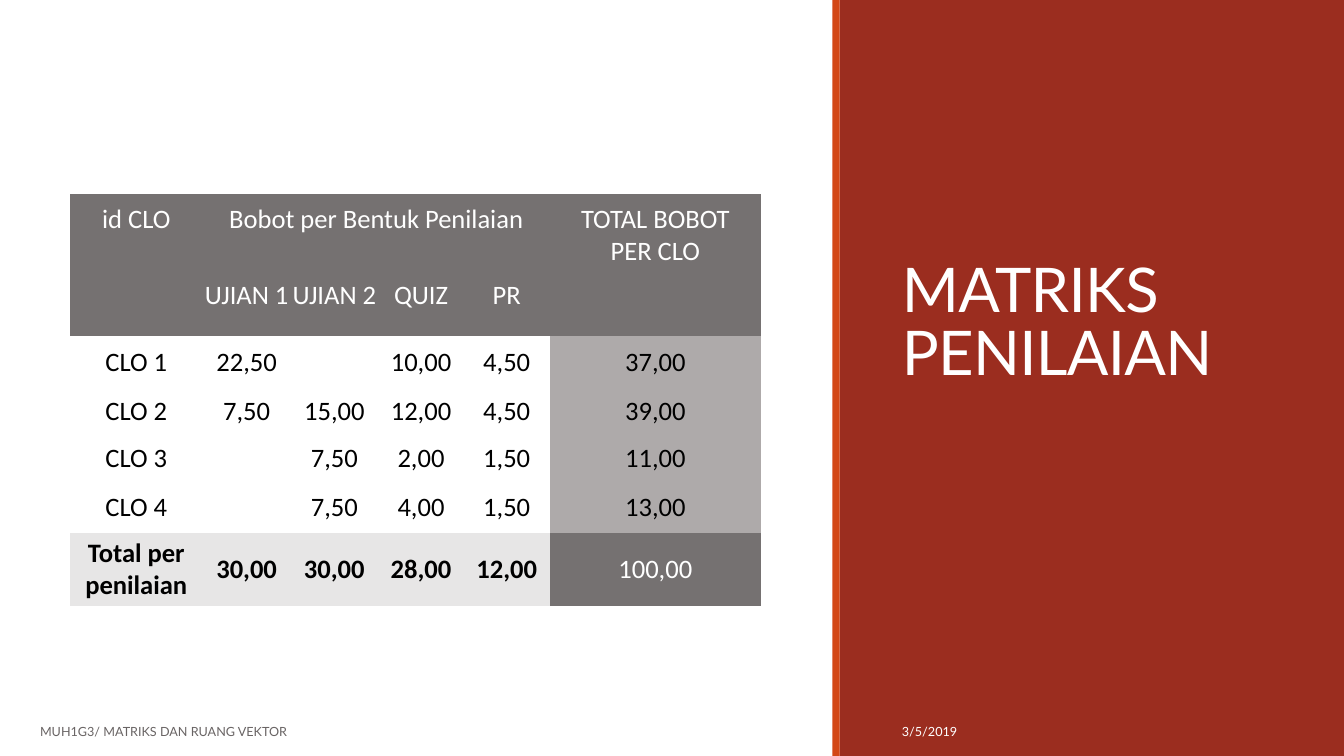
from pptx import Presentation
from pptx.dml.color import RGBColor
from pptx.enum.shapes import MSO_SHAPE
from pptx.enum.text import MSO_ANCHOR, PP_ALIGN
from pptx.util import Cm, Pt

THEME = {
    "red": "9B2D1F", "orange": "D34817", "white": "FFFFFF", "black": "000000",
    "muted": "696464", "dark": "757171", "mid": "AEAAAA", "light": "E7E6E6",
    "text_font": "Lato", "table_font": "Calibri",
    "title_size": 44, "table_size": 19, "footer_size": 9,
}

SLIDE_W, SLIDE_H = 33.87, 19.05
PANEL_X, STRIPE_W = 21.16, 0.18
BARS = [  # left, width, colour
    (PANEL_X, SLIDE_W - PANEL_X, "red"),
    (PANEL_X - STRIPE_W, STRIPE_W, "orange"),
]
TEXTS = [  # text, box, size, colour, anchor, format of the paragraph, letter spacing
    ("MATRIKS PENILAIAN", (22.48, 1.78, 10.16, 8.13), "title_size", "white",
     MSO_ANCHOR.BOTTOM, {"line_spacing": 0.85}, -50),
    ("MUH1G3/ MATRIKS DAN RUANG VEKTOR", (0.76, 17.93, 19.58, 1.02), "footer_size", "muted",
     MSO_ANCHOR.MIDDLE, {"space_after": Pt(6)}, 0),
    ("3/5/2019", (22.48, 17.93, 7.75, 1.02), "footer_size", "white",
     MSO_ANCHOR.MIDDLE, {"space_after": Pt(6)}, 0),
]

TABLE_AT = (1.76, 4.89)
COLS = [3.35, 2.21, 2.21, 2.16, 2.16, 5.33]
ROWS = [1.52, 2.01, 1.3, 1.17, 1.17, 1.3, 1.85]
MERGES = [((0, 0), (1, 0)), ((0, 1), (0, 4)), ((0, 5), (1, 5))]
CELLS = [
    ["id CLO", "Bobot per Bentuk Penilaian", "", "", "", "TOTAL BOBOT PER CLO"],
    ["", "UJIAN 1", "UJIAN 2", "QUIZ", "PR", ""],
    ["CLO 1", "22,50", "", "10,00", "4,50", "37,00"],
    ["CLO 2", "7,50", "15,00", "12,00", "4,50", "39,00"],
    ["CLO 3", "", "7,50", "2,00", "1,50", "11,00"],
    ["CLO 4", "", "7,50", "4,00", "1,50", "13,00"],
    ["Total per penilaian", "30,00", "30,00", "28,00", "12,00", "100,00"],
]
HEAD_FORMAT = {"vertical_anchor": MSO_ANCHOR.TOP, "margin_left": Cm(0.46), "margin_right": Cm(0.46),
               "margin_top": Cm(0.23), "margin_bottom": Cm(0.23)}
CELL_FORMAT = {"vertical_anchor": MSO_ANCHOR.MIDDLE, "margin_left": Cm(0.02), "margin_right": Cm(0.02),
               "margin_top": Cm(0.02), "margin_bottom": Cm(0)}
NO_STYLE = "{2D5ABB26-0587-4C30-8999-92F81FD0307C}"


def rgb(name):
    return RGBColor.from_string(THEME[name])


def apply(obj, values):
    for name, value in values.items():
        setattr(obj, name, value)


def add_run(p, text, font, size, color, bold=False):
    r = p.add_run()
    r.text = text
    apply(r.font, {"name": THEME[font], "size": Pt(THEME[size]), "bold": bold})
    r.font.color.rgb = rgb(color)
    return r


def add_bar(s, left, width, color):
    sp = s.shapes.add_shape(MSO_SHAPE.RECTANGLE, Cm(left), 0, Cm(width), Cm(SLIDE_H))
    sp.shadow.inherit = False
    sp.fill.solid()
    sp.fill.fore_color.rgb = rgb(color)
    sp.line.fill.background()


def add_text(s, text, box, size, color, anchor, para_format, spacing):
    tf = s.shapes.add_textbox(*map(Cm, box)).text_frame
    apply(tf, {"word_wrap": True, "vertical_anchor": anchor})
    p = tf.paragraphs[0]
    apply(p, para_format)
    r = add_run(p, text, "text_font", size, color)
    if spacing:
        r.font._element.set("spc", str(spacing))


def cell_colors(row, col):
    """Fill and text colour by the cell's zone; no fill in the body."""
    last_row, last_col = row == len(ROWS) - 1, col == len(COLS) - 1
    if row < 2 or (last_row and last_col):
        return "dark", "white"
    if last_row:
        return "light", "black"
    return ("mid" if last_col else None), "black"


def add_matrix(s):
    size = Cm(sum(COLS)), Cm(sum(ROWS))
    table = s.shapes.add_table(len(ROWS), len(COLS), *map(Cm, TABLE_AT), *size).table
    apply(table, {"first_row": False, "horz_banding": False})
    table._tbl.tblPr[0].text = NO_STYLE
    for column, width in zip(table.columns, COLS):
        column.width = Cm(width)
    for row, height in zip(table.rows, ROWS):
        row.height = Cm(height)
    for start, end in MERGES:
        table.cell(*start).merge(table.cell(*end))
    for i, values in enumerate(CELLS):
        for j, text in enumerate(values):
            cell = table.cell(i, j)
            fill, color = cell_colors(i, j)
            apply(cell, HEAD_FORMAT if i == 0 else CELL_FORMAT)
            if fill:
                cell.fill.solid()
                cell.fill.fore_color.rgb = rgb(fill)
            else:
                cell.fill.background()
            if text:
                p = cell.text_frame.paragraphs[0]
                p.alignment = PP_ALIGN.CENTER
                add_run(p, text, "table_font", "table_size", color, fill == "light")


def main():
    prs = Presentation()
    apply(prs, {"slide_width": Cm(SLIDE_W), "slide_height": Cm(SLIDE_H)})
    s = prs.slides.add_slide(prs.slide_layouts[6])
    for bar in BARS:
        add_bar(s, *bar)
    for item in TEXTS:
        add_text(s, *item)
    add_matrix(s)
    prs.save("out.pptx")


if __name__ == "__main__":
    main()
